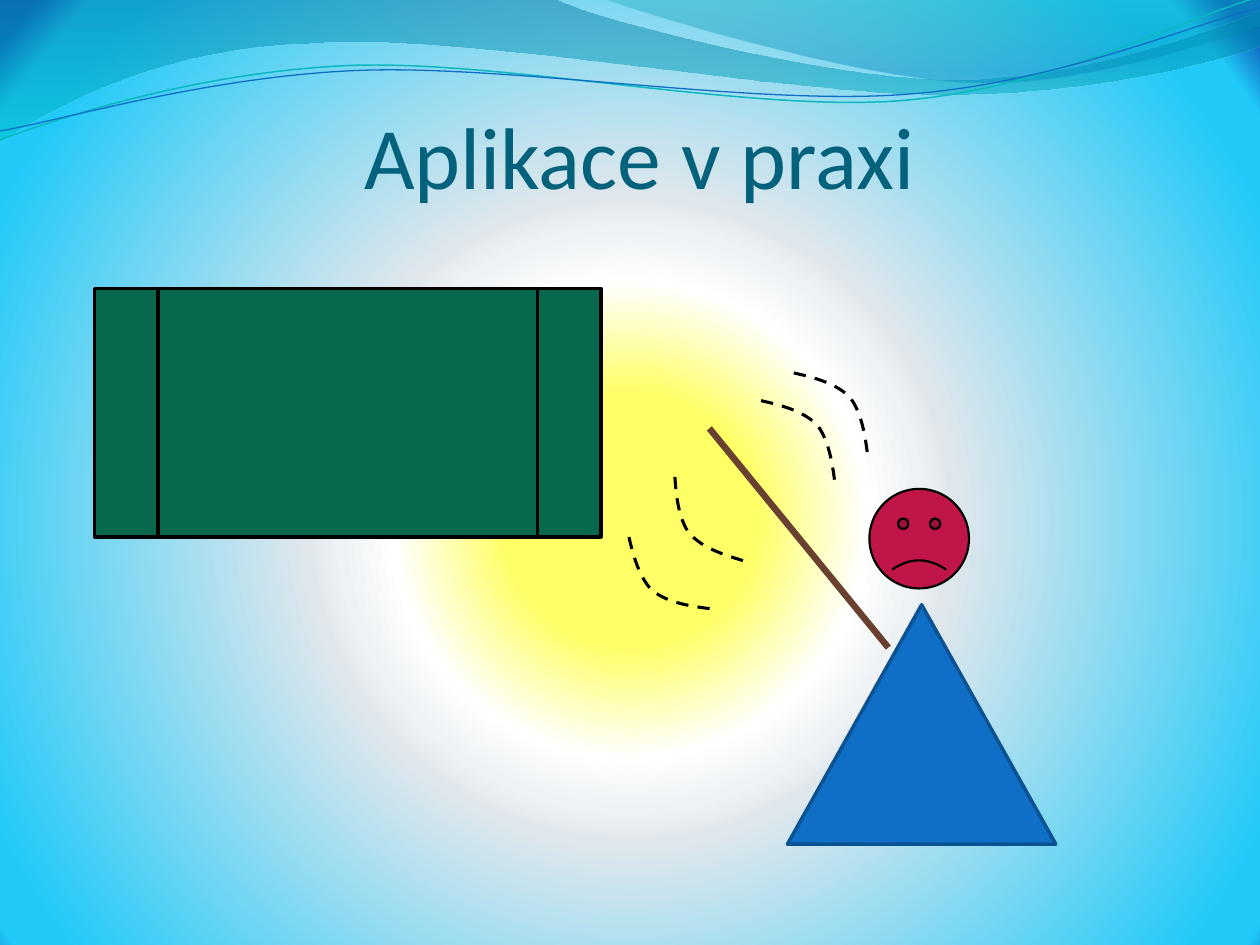
from dataclasses import dataclass
from math import cos, radians, sin

from lxml.etree import SubElement
from pptx import Presentation
from pptx.dml.color import RGBColor
from pptx.enum.dml import MSO_LINE
from pptx.enum.shapes import MSO_CONNECTOR, MSO_SHAPE
from pptx.enum.text import MSO_ANCHOR, MSO_AUTO_SIZE, PP_ALIGN
from pptx.oxml.ns import qn
from pptx.util import Inches, Pt


@dataclass(frozen=True)
class Theme:
    """Colours, type and line sizes of the slide."""
    font: str = "Calibri"
    size: float = 50
    title: str = "04617B"
    ink: str = "000000"
    board: str = "08684E"
    stick: str = "6A4130"
    face: str = "C01647"
    body: str = "0F6FC6"
    edge: str = "0B5292"
    teal: str = "0AB8BF"
    glow: tuple = ((0, "FFFF66"), (16, "FFFF66"), (30, "FFFFFF"), (37, "EEF2F5"),
                   (41, "E0E7EC"), (90, "20C9F8"), (95, "20C9F8"), (100, "0F6FC6"))
    wave: tuple = ((0, "0074A1", 45), (100, "00C6CF", 55))
    crest: tuple = ((0, "00A1A9", 30), (80, "008BBF", 45))


THEME = Theme()

WAVE = [(0, 0), (4.4, -0.01),
        (4.76, 0.17, 6.64, 0.63, 7.58, 0.63), (8.53, 0.63, 9.58, 0.26, 10, 0.09),
        (10.01, 0.36),
        (9.83, 0.44, 8.7, 0.76, 7.46, 0.75), (6.22, 0.75, 3.82, 0.28, 2.57, 0.34),
        (1.29, 0.36, 0.46, 0.83, -0.01, 1.13), (0, 0)]
CREST = [(4.79, -0.01), (5.09, 0.11, 6.82, 0.62, 7.69, 0.65),
         (8.56, 0.69, 9.61, 0.32, 10, 0.21), (10, 0), (4.79, -0.01)]
TILT = -2.7
STRANDS = [
    (THEME.teal, 0.85, (4.99, 0.58),
     [(0, 1.11), (0.48, 0.93, 1.58, 0.57, 2.77, 0.52),
      (3.95, 0.47, 5.93, 0.89, 7.13, 0.8), (8.33, 0.71, 9.38, 0.15, 9.98, -0.02)]),
    (THEME.body, 0.75, (5, 0.59),
     [(0, 1.04), (0.47, 0.96, 1.64, 0.61, 2.83, 0.56),
      (4.03, 0.51, 5.97, 0.84, 7.17, 0.75), (8.36, 0.67, 9.41, 0.21, 10, 0.06)]),
]
SWISH = [(0, 0), (0.18, 0.04, 0.35, 0.09, 0.45, 0.2), (0.54, 0.32, 0.57, 0.51, 0.59, 0.69)]
SWINGS = [(6.04, 3.18, 0), (6.3, 2.96, 0), (5.33, 3.74, 183.8), (5.01, 4.17, 174.5)]


def style(item, **form):
    """Set each format value on the item."""
    for name, value in form.items():
        setattr(item, name, value)


def paint(fill, color):
    """Fill with one plain colour."""
    fill.solid()
    fill.fore_color.rgb = RGBColor.from_string(color)


def stroke(line, color, width, dash=None):
    """Give a line its colour, width and dash."""
    paint(line.fill, color)
    style(line, width=Pt(width), dash_style=dash)


def blend(fill, owner, stops, focus=None):
    """Fill the owner with stops, downward or round a focus."""
    fill.solid()
    old = owner.find(qn("a:solidFill"))
    grad = owner.makeelement(qn("a:gradFill"), {"rotWithShape": "1"})
    owner.replace(old, grad)
    group = SubElement(grad, qn("a:gsLst"))
    for place, color, *alpha in stops:
        stop = SubElement(group, qn("a:gs"), pos=str(place * 1000))
        tint = SubElement(stop, qn("a:srgbClr"), val=color)
        for part in alpha:
            SubElement(tint, qn("a:alpha"), val=str(part * 1000))
    if focus:
        ring = SubElement(grad, qn("a:path"), {"path": "circle"})
        SubElement(ring, qn("a:fillToRect"),
                   {side: str(part * 1000) for side, part in zip("ltrb", focus)})
    else:
        SubElement(grad, qn("a:lin"), ang="5400000", scaled="1")


def pairs(part):
    """Split flat numbers into points."""
    return list(zip(part[::2], part[1::2]))


def turn(route, angle, hub):
    """Rotate a route clockwise round the hub."""
    c, s = cos(radians(angle)), sin(radians(angle))
    moved = []
    for part in route:
        shifts = [(x - hub[0], y - hub[1]) for x, y in pairs(part)]
        spots = [(hub[0] + x * c - y * s, hub[1] + x * s + y * c) for x, y in shifts]
        moved.append(sum(spots, ()))
    return moved


def outline(slide, route, close=False):
    """Add a free outline of lines and cubic curves."""
    dots = [(Inches(x), Inches(y)) for part in route for x, y in pairs(part)]
    pen = slide.shapes.build_freeform(*dots[0])
    pen.add_line_segments(dots[1:], close=close)
    shape = pen.convert_to_shape()
    shape.shadow.inherit = False
    legs = iter(list(shape.element.iter(qn("a:lnTo"))))
    for part in route[1:]:
        leg = next(legs)
        if len(part) == 6:
            bend = leg.makeelement(qn("a:cubicBezTo"), {})
            leg.addprevious(bend)
            for piece in (leg, next(legs), next(legs)):
                bend.append(piece[0])
                piece.getparent().remove(piece)
    return shape


def ribbon(slide, route, stops):
    """Add a closed band with a clear gradient."""
    shape = outline(slide, route, close=True)
    blend(shape.fill, shape.element.spPr, stops)
    shape.line.fill.background()


def curve(slide, route, color, width, dash=None):
    """Add an open curve and return it."""
    shape = outline(slide, route)
    shape.fill.background()
    stroke(shape.line, color, width, dash)
    return shape


def figure(slide, kind, box, fill, edge, width):
    """Add a filled preset shape and return it."""
    shape = slide.shapes.add_shape(kind, *map(Inches, box))
    shape.shadow.inherit = False
    paint(shape.fill, fill)
    stroke(shape.line, edge, width)
    return shape


def pointer(slide, start, end):
    """Add the straight stick."""
    stick = slide.shapes.add_connector(MSO_CONNECTOR.STRAIGHT, *map(Inches, start + end))
    stroke(stick.line, THEME.stick, 3.75)
    SubElement(stick.element.spPr, qn("a:effectLst"))


def heading(slide, text):
    """Place and format the title above the waves."""
    title = slide.shapes.title
    style(title, left=Inches(0.51), top=Inches(0.76), width=Inches(9.13), height=Inches(1.34))
    frame = title.text_frame
    frame.text = text
    style(frame, margin_left=0, margin_right=0, margin_top=Inches(0.05), margin_bottom=0,
          vertical_anchor=MSO_ANCHOR.TOP, auto_size=MSO_AUTO_SIZE.NONE, word_wrap=True)
    line = frame.paragraphs[0]
    line.alignment = PP_ALIGN.CENTER
    font = line.runs[0].font
    style(font, name=THEME.font, size=Pt(THEME.size))
    font.color.rgb = RGBColor.from_string(THEME.title)
    title.element.getparent().append(title.element)


def main():
    """Build the slide and save it."""
    deck = Presentation()
    style(deck, slide_width=Inches(10), slide_height=Inches(7.5))
    slide = deck.slides.add_slide(deck.slide_layouts[5])
    fill = slide.background.fill
    fill.solid()
    blend(fill, next(slide.element.iter(qn("p:bgPr"))), THEME.glow, (10, 110, 10, 100))
    ribbon(slide, WAVE, THEME.wave)
    ribbon(slide, CREST, THEME.crest)
    for color, width, hub, route in STRANDS:
        curve(slide, turn(route, -TILT, hub), color, width).rotation = TILT
    heading(slide, "Aplikace v praxi")
    figure(slide, MSO_SHAPE.FLOWCHART_PREDEFINED_PROCESS, (0.75, 2.29, 4.02, 1.97),
           THEME.board, THEME.ink, 2)
    pointer(slide, (7.05, 5.14), (5.63, 3.4))
    face = figure(slide, MSO_SHAPE.SMILEY_FACE, (6.9, 3.88, 0.79, 0.79),
                  THEME.face, THEME.ink, 1.25)
    face.adjustments[0] = -0.047
    figure(slide, MSO_SHAPE.ISOSCELES_TRIANGLE, (6.25, 4.8, 2.13, 1.9),
           THEME.body, THEME.edge, 2)
    for left, top, angle in SWINGS:
        swish = curve(slide, SWISH, THEME.ink, 1.75, MSO_LINE.DASH)
        style(swish, left=Inches(left), top=Inches(top), rotation=angle)
    deck.save("out.pptx")


if __name__ == "__main__":
    main()
